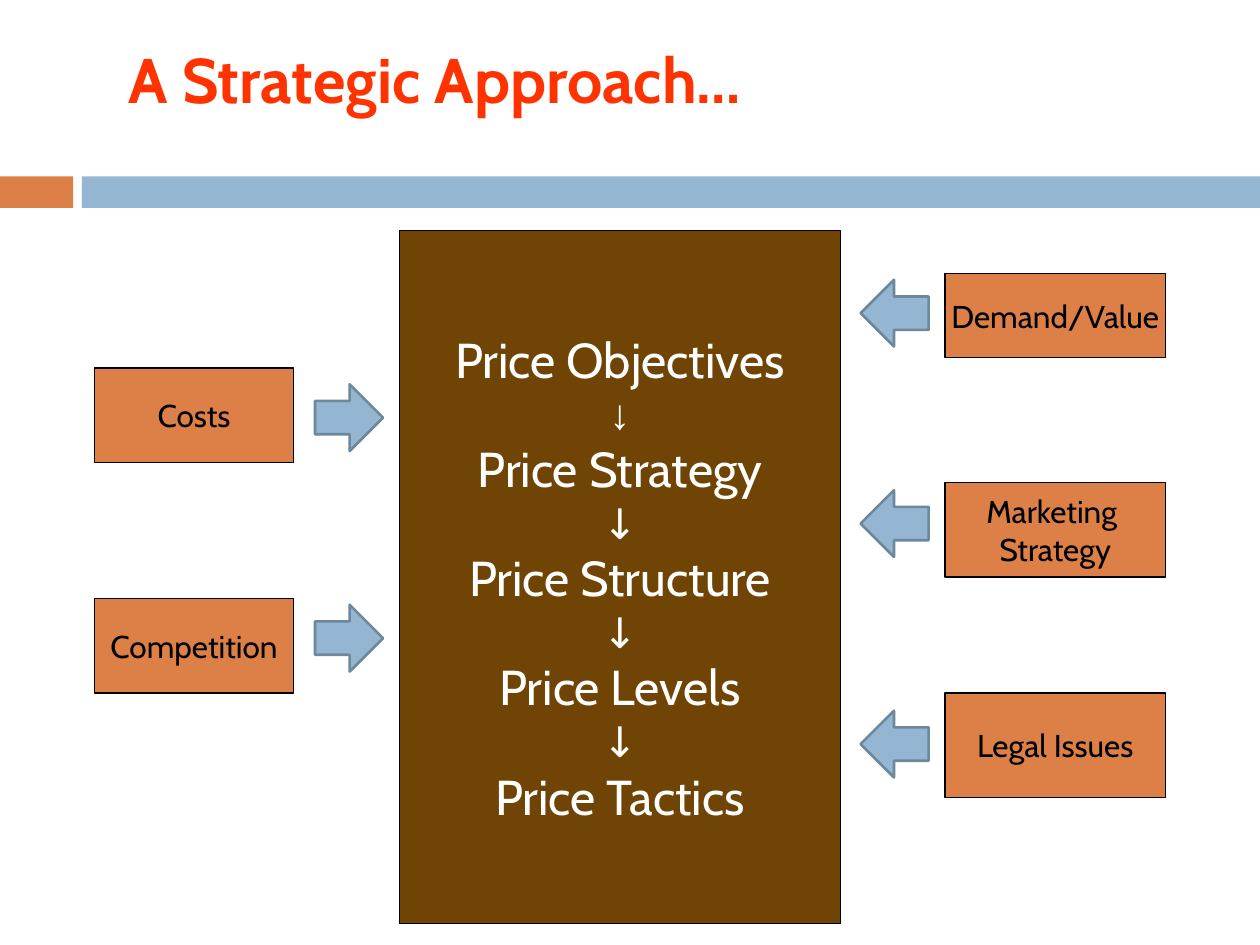
import pptx
import pptx.dml.color
import pptx.enum.shapes
import pptx.enum.text
import pptx.util

Inches = pptx.util.Inches
Pt = pptx.util.Pt
RGBColor = pptx.dml.color.RGBColor
MSO_SHAPE = pptx.enum.shapes.MSO_SHAPE
PP_ALIGN = pptx.enum.text.PP_ALIGN
MSO_ANCHOR = pptx.enum.text.MSO_ANCHOR

RED = RGBColor(0xFF, 0x33, 0x00)
ORANGE = RGBColor(0xDD, 0x80, 0x47)
BLUE = RGBColor(0x94, 0xB6, 0xD2)
DARK_BLUE = RGBColor(0x6D, 0x87, 0x9B)
BROWN = RGBColor(0x70, 0x44, 0x04)
BLACK = RGBColor(0x00, 0x00, 0x00)
WHITE = RGBColor(0xFF, 0xFF, 0xFF)

FONT = "Cabin"
ARROW = "↓"
STEPS = ["Price Objectives", "Price Strategy", "Price Structure",
         "Price Levels", "Price Tactics"]

# Factors: label lines, box top, box height, arrow top
LEFT_FACTORS = [
    (["Costs"], 2.92, 0.75, 3.05),
    (["Competition"], 4.75, 0.75, 4.8),
]
RIGHT_FACTORS = [
    (["Demand/Value"], 2.17, 0.67, 2.22),
    (["Marketing ", "Strategy"], 3.83, 0.75, 3.89),
    (["Legal Issues"], 5.5, 0.83, 5.64),
]


def add_filled_shape(slide, kind, left, top, width, height, fill,
                     line=None, line_width=0.75):
    shape = slide.shapes.add_shape(
        kind, Inches(left), Inches(top), Inches(width), Inches(height))
    shape.shadow.inherit = False
    shape.fill.solid()
    shape.fill.fore_color.rgb = fill
    if line is None:
        shape.line.fill.background()
    else:
        shape.line.color.rgb = line
        shape.line.width = Pt(line_width)
    return shape


def format_run(run, size, color, name=FONT):
    run.font.name = name
    run.font.size = Pt(size)
    run.font.color.rgb = color


def add_box(slide, left, top, width, height, fill, lines, color):
    """Outlined box; lines holds (text, size, font name) for each paragraph."""
    box = add_filled_shape(slide, MSO_SHAPE.RECTANGLE, left, top, width,
                           height, fill, BLACK)
    frame = box.text_frame
    frame.word_wrap = False
    frame.vertical_anchor = MSO_ANCHOR.MIDDLE
    frame.text = "\n".join(text for text, size, name in lines)
    for paragraph, (text, size, name) in zip(frame.paragraphs, lines):
        paragraph.alignment = PP_ALIGN.CENTER
        format_run(paragraph.runs[0], size, color, name)


def add_title(slide, text):
    title = slide.shapes.title
    title.left, title.top = Inches(0.92), Inches(0.08)
    title.width, title.height = Inches(6.67), Inches(1.08)
    title.text_frame.text = text
    title.text_frame.vertical_anchor = MSO_ANCHOR.MIDDLE
    paragraph = title.text_frame.paragraphs[0]
    paragraph.alignment = PP_ALIGN.LEFT
    format_run(paragraph.runs[0], 36, RED)
    paragraph.runs[0].font.bold = True


def add_steps(slide):
    lines = []
    for index, step in enumerate(STEPS):
        if index:
            # The first arrow is set in a serif face
            name = "Times New Roman" if index == 1 else FONT
            lines.append((ARROW, 24, name))
        lines.append((step, 28, FONT))
    add_box(slide, 3.17, 1.83, 3.5, 5.5, BROWN, lines, WHITE)


def add_factors(slide, factors, box_left, box_width, arrow_left, rotation):
    for labels, top, height, arrow_top in factors:
        lines = [(label, 18, FONT) for label in labels]
        add_box(slide, box_left, top, box_width, height, ORANGE, lines, BLACK)
        arrow = add_filled_shape(slide, MSO_SHAPE.RIGHT_ARROW, arrow_left,
                                 arrow_top, 0.54, 0.53, BLUE, DARK_BLUE, 1.5)
        arrow.rotation = rotation


def main():
    presentation = pptx.Presentation()
    presentation.slide_width = Inches(10)
    presentation.slide_height = Inches(7.5)
    slide = presentation.slides.add_slide(presentation.slide_layouts[5])

    # Header band
    add_filled_shape(slide, MSO_SHAPE.RECTANGLE, 0, 1.4, 0.58, 0.25, ORANGE)
    add_filled_shape(slide, MSO_SHAPE.RECTANGLE, 0.65, 1.4, 9.35, 0.25, BLUE)
    add_title(slide, "A Strategic Approach…")

    # Pricing steps with the factors that act on them
    add_steps(slide)
    add_factors(slide, LEFT_FACTORS, 0.75, 1.58, 2.5, 0)
    add_factors(slide, RIGHT_FACTORS, 7.5, 1.75, 6.83, 180)

    presentation.save("out.pptx")


if __name__ == "__main__":
    main()
